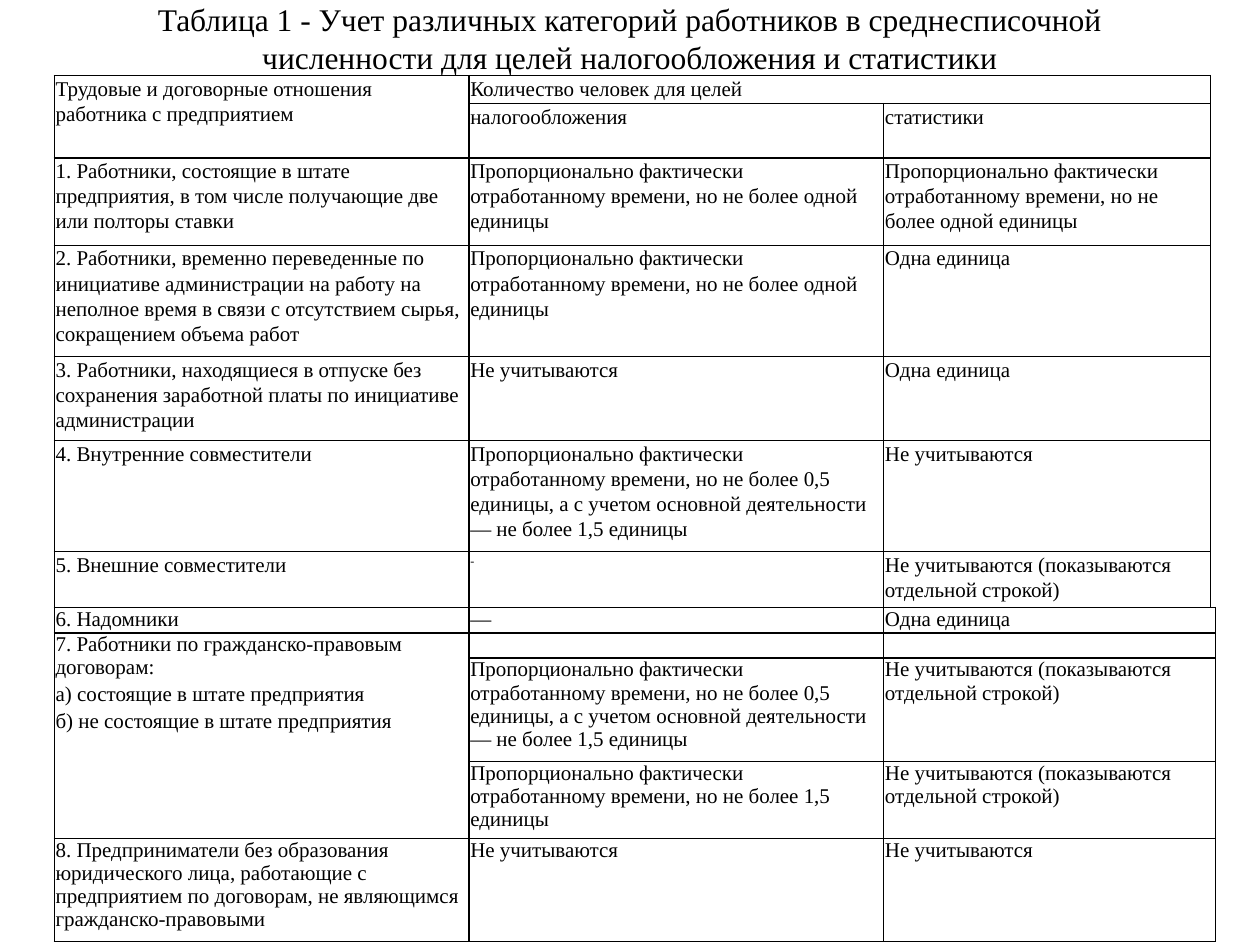
from lxml import etree
from pptx import Presentation
from pptx.dml.color import RGBColor
from pptx.enum.text import MSO_ANCHOR, PP_ALIGN
from pptx.oxml.ns import qn
from pptx.util import Pt

BOTTOM = MSO_ANCHOR.BOTTOM
CENTER = PP_ALIGN.CENTER
BLACK = RGBColor(0, 0, 0)
FONT_NAME = "Times New Roman"
BODY_SIZE = 12
TITLE = ("Таблица 1 - Учет различных категорий работников в среднесписочной "
         "численности для целей налогообложения и статистики")

COLUMN_WIDTHS = [237, 237, 186.8, 2.7]
ROW_HEIGHTS = [16, 16, 50, 63.5, 48, 63.5, 32, 14.4, 14.4, 59, 44, 59]
EDGE_COLUMN = 3
FIRST_WIDE_ROW = 7  # from here on the third column takes in the narrow edge column

ONE_UNIT = "Пропорционально фактически отработанному времени, но не более одной единицы"
HALF_UNIT = ("Пропорционально фактически отработанному времени, но не более 0,5 единицы, "
             "а с учетом основной деятельности — не более 1,5 единицы")
NOT_COUNTED = "Не учитываются"
SEPARATE_LINE = "Не учитываются (показываются отдельной строкой)"
SINGLE = "Одна единица"
ROWS = [
    ("Трудовые и договорные отношения работника с предприятием",
     "Количество человек для целей", ""),
    ("", "налогообложения", "статистики"),
    ("1. Работники, состоящие в штате предприятия, в том числе получающие две "
     "или полторы ставки", ONE_UNIT, ONE_UNIT),
    ("2. Работники, временно переведенные по инициативе администрации на работу на "
     "неполное время в связи с отсутствием сырья, сокращением объема работ",
     ONE_UNIT, SINGLE),
    ("3. Работники, находящиеся в отпуске без сохранения заработной платы по "
     "инициативе администрации", NOT_COUNTED, SINGLE),
    ("4. Внутренние совместители", HALF_UNIT, NOT_COUNTED),
    ("5. Внешние совместители", "-", SEPARATE_LINE),
    ("6. Надомники", "—", SINGLE),
    ("7. Работники по гражданско-правовым договорам:\n"
     "а) состоящие в штате предприятия\n"
     "б) не состоящие в штате предприятия", "", ""),
    ("", HALF_UNIT, SEPARATE_LINE),
    ("", "Пропорционально фактически отработанному времени, но не более 1,5 единицы",
     SEPARATE_LINE),
    ("8. Предприниматели без образования юридического лица, работающие с предприятием "
     "по договорам, не являющимся гражданско-правовыми", NOT_COUNTED, NOT_COUNTED),
]


def format_run(run, size):
    run.font.name = FONT_NAME
    run.font.size = Pt(size)
    run.font.color.rgb = BLACK


def add_title(slide, left, top, width, height):
    text_frame = slide.shapes.add_textbox(Pt(left), Pt(top), Pt(width), Pt(height)).text_frame
    text_frame.word_wrap = True
    text_frame.margin_left = text_frame.margin_right = Pt(7.2)
    text_frame.margin_top = text_frame.margin_bottom = 0
    text_frame.vertical_anchor = BOTTOM
    text_frame.text = TITLE
    paragraph = text_frame.paragraphs[0]
    paragraph.alignment = CENTER
    format_run(paragraph.runs[0], 18)


def set_borders(cell, sides):
    """Draw black one-point lines on the given sides; leave the others bare."""
    properties = cell._tc.get_or_add_tcPr()
    for index, side in enumerate("LRTB"):
        line = etree.Element(qn(f"a:ln{side}"), w=str(Pt(1)))
        if side in sides:
            fill = etree.SubElement(line, qn("a:solidFill"))
            etree.SubElement(fill, qn("a:srgbClr"), val=str(BLACK))
        else:
            etree.SubElement(line, qn("a:noFill"))
        properties.insert(index, line)


def fill_cell(cell, text, side_margin, line_spacing):
    cell.fill.background()
    cell.margin_left = cell.margin_right = Pt(side_margin)
    cell.margin_top = cell.margin_bottom = 0
    cell.text_frame.text = text
    for index, paragraph in enumerate(cell.text_frame.paragraphs):
        if line_spacing:
            paragraph.line_spacing = line_spacing
        if index:
            paragraph.space_before = Pt(2)
        for run in paragraph.runs:
            format_run(run, BODY_SIZE)
        if not paragraph.runs:
            etree.SubElement(paragraph._p, qn("a:endParaRPr"), sz=str(BODY_SIZE * 100))


def add_staff_table(slide, left, top):
    frame = slide.shapes.add_table(
        len(ROW_HEIGHTS), len(COLUMN_WIDTHS), Pt(left), Pt(top),
        Pt(sum(COLUMN_WIDTHS)), Pt(sum(ROW_HEIGHTS)))
    table = frame.table
    table.first_row = table.horz_banding = False
    for column, width in zip(table.columns, COLUMN_WIDTHS):
        column.width = Pt(width)
    for row, height in zip(table.rows, ROW_HEIGHTS):
        row.height = Pt(height)

    for row_index, texts in enumerate(ROWS):
        wide = row_index >= FIRST_WIDE_ROW
        for column_index, text in enumerate((*texts, "")):
            cell = table.cell(row_index, column_index)
            side_margin = 0 if column_index == EDGE_COLUMN else 0.75
            fill_cell(cell, text, side_margin, None if wide else 1.08)
            if column_index < EDGE_COLUMN or wide:
                sides = "LRTB"
            else:
                sides = "LB" if row_index == FIRST_WIDE_ROW - 1 else "L"
            set_borders(cell, sides)

    table.cell(0, 0).merge(table.cell(1, 0))
    table.cell(0, 1).merge(table.cell(0, 2))
    table.cell(8, 0).merge(table.cell(10, 0))
    for row_index in range(FIRST_WIDE_ROW, len(ROWS)):
        table.cell(row_index, 2).merge(table.cell(row_index, EDGE_COLUMN))

    dash = table.cell(6, 1).text_frame.paragraphs[0].runs[0]
    dash._r.get_or_add_rPr().set("baseline", "30000")


def main():
    presentation = Presentation()
    presentation.slide_width = Pt(720)
    presentation.slide_height = Pt(540)
    slide = presentation.slides.add_slide(presentation.slide_layouts[6])
    add_title(slide, 36, 21.6, 648, 21.6)
    add_staff_table(slide, 31, 43.2)
    presentation.save("out.pptx")


if __name__ == "__main__":
    main()
